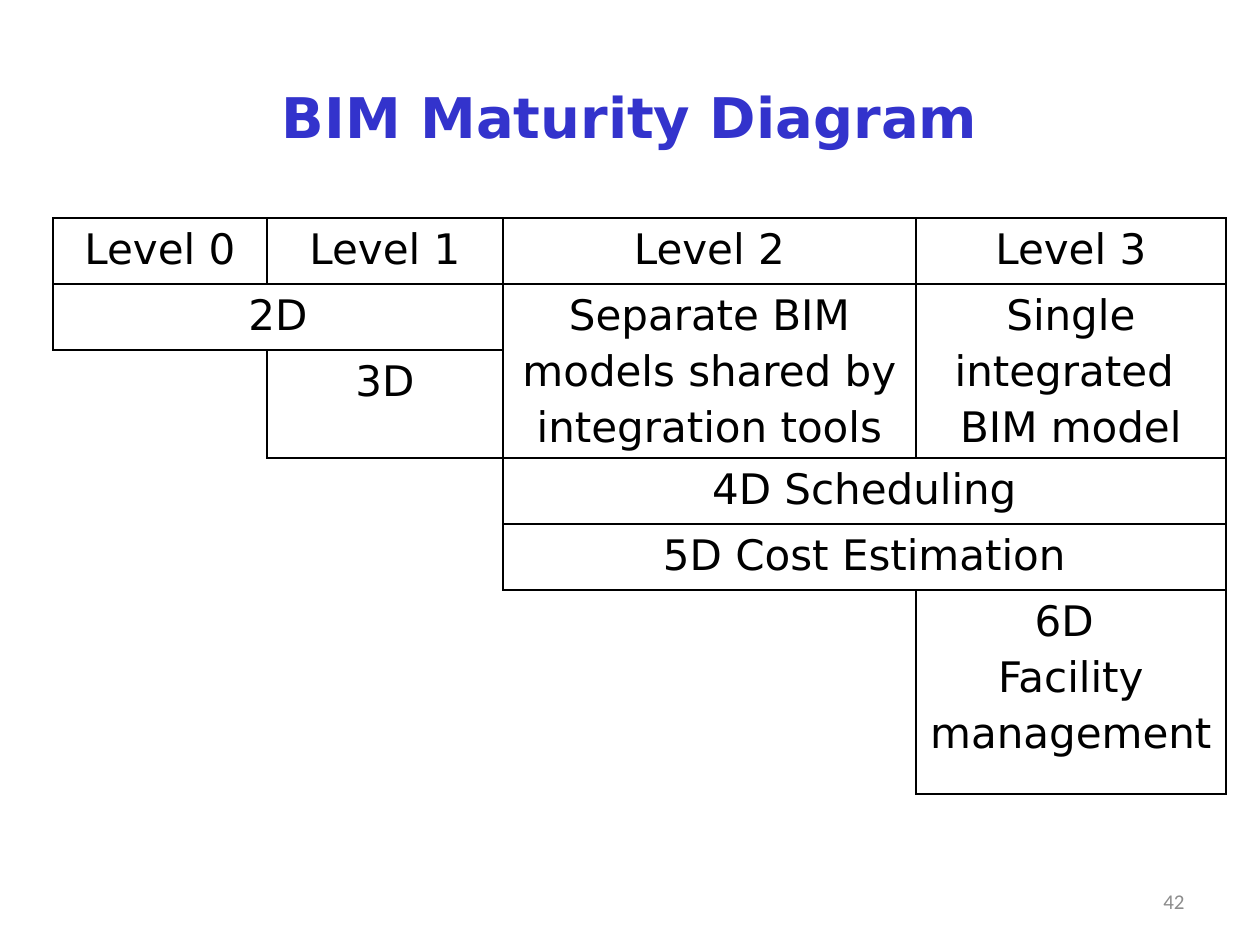
from lxml import etree
from pptx import Presentation
from pptx import util as u
from pptx.dml.color import RGBColor
from pptx.enum import text
from pptx.oxml import ns

PX = u.Inches(1) // 126
BLACK, BLUE, GREY = "000000", "3333CC", "8C8C8C"
SIDES = {"lnL": (0, -1), "lnR": (0, 1), "lnT": (-1, 0), "lnB": (1, 0)}

COLUMNS = [214, 236, 413, 310]
ROWS = [66, 66, 67, 66, 66, 204]
# row, column, rows spanned, columns spanned, paragraphs
STAGES = [
    *((0, level, 1, 1, [f"Level {level}"]) for level in range(4)),
    (1, 0, 1, 2, ["2D"]),
    (1, 2, 2, 1, ["Separate BIM models shared by integration tools"]),
    (1, 3, 2, 1, ["Single integrated ", "BIM model"]),
    (2, 1, 1, 1, ["3D"]),
    (3, 2, 1, 2, ["4D Scheduling"]),
    (4, 2, 1, 2, ["5D Cost Estimation"]),
    (5, 3, 1, 1, ["6D ", "Facility management "]),
]


def px(*lengths):
    return [length * PX for length in lengths]


def rgb(hex_colour):
    return RGBColor.from_string(hex_colour)


def add_border(cell, side, colour):
    """Draw one side of a cell, or clear it when colour is None."""
    line = etree.SubElement(cell._tc.get_or_add_tcPr(), ns.qn(f"a:{side}"), w=str(u.Pt(1)))
    if colour is None:
        etree.SubElement(line, ns.qn("a:noFill"))
    else:
        fill = etree.SubElement(line, ns.qn("a:solidFill"))
        etree.SubElement(fill, ns.qn("a:srgbClr"), val=colour)


class SlideBuilder:
    def __init__(self, slide, font):
        self.slide = slide
        self.font = font

    def add_lines(self, frame, lines, size, colour, align, bold=False, font=None, spacing=None):
        for i, line in enumerate(lines):
            paragraph = frame.add_paragraph() if i else frame.paragraphs[0]
            paragraph.alignment = align
            paragraph.line_spacing = spacing
            run = paragraph.add_run()
            run.text = line
            run.font.name = font or self.font
            run.font.size = u.Pt(size)
            run.font.bold = bold
            run.font.color.rgb = rgb(colour)

    def label(self, box, line, size, colour, align, **style):
        frame = self.slide.shapes.add_textbox(*px(*box)).text_frame
        frame.word_wrap = True
        frame.vertical_anchor = text.MSO_ANCHOR.MIDDLE
        self.add_lines(frame, [line], size, colour, align, **style)

    def stepped_table(self, left, top, columns, rows, stages):
        """Table whose lines surround only the cells that belong to a stage."""
        table = self.slide.shapes.add_table(
            len(rows), len(columns), *px(left, top, sum(columns), sum(rows))).table
        table.first_row = table.horz_banding = False
        for column, width in zip(table.columns, columns):
            column.width = width * PX
        for row, height in zip(table.rows, rows):
            row.height = height * PX

        owners = {}
        for r, c, height, width, lines in stages:
            cell = table.cell(r, c)
            if height * width > 1:
                cell.merge(table.cell(r + height - 1, c + width - 1))
            owners.update({(r + i, c + j): (r, c)
                           for i in range(height) for j in range(width)})
            self.add_lines(cell.text_frame, lines, 24, BLACK,
                           text.PP_ALIGN.CENTER, spacing=1.15)

        for r in range(len(rows)):
            for c in range(len(columns)):
                cell = table.cell(r, c)
                cell.margin_left = cell.margin_right = u.Inches(0.1)
                cell.margin_top = cell.margin_bottom = 0
                owner = owners.get((r, c))
                for side, (down, across) in SIDES.items():
                    edge = owner == (r, c) or owner != owners.get((r + down, c + across))
                    add_border(cell, side, BLACK if edge else None)
                cell.fill.background()


def main():
    deck = Presentation()
    deck.slide_width, deck.slide_height = u.Inches(10), u.Inches(7.5)
    builder = SlideBuilder(deck.slides.add_slide(deck.slide_layouts[6]), "DejaVu Sans")
    builder.label((63, 38, 1134, 157), "BIM Maturity Diagram", 32, BLUE,
                  text.PP_ALIGN.CENTER, bold=True)
    builder.stepped_table(53, 218, COLUMNS, ROWS, STAGES)
    builder.label((903, 876, 294, 50), "42", 12, GREY,
                  text.PP_ALIGN.RIGHT, font="Calibri")
    deck.save("out.pptx")


if __name__ == "__main__":
    main()
